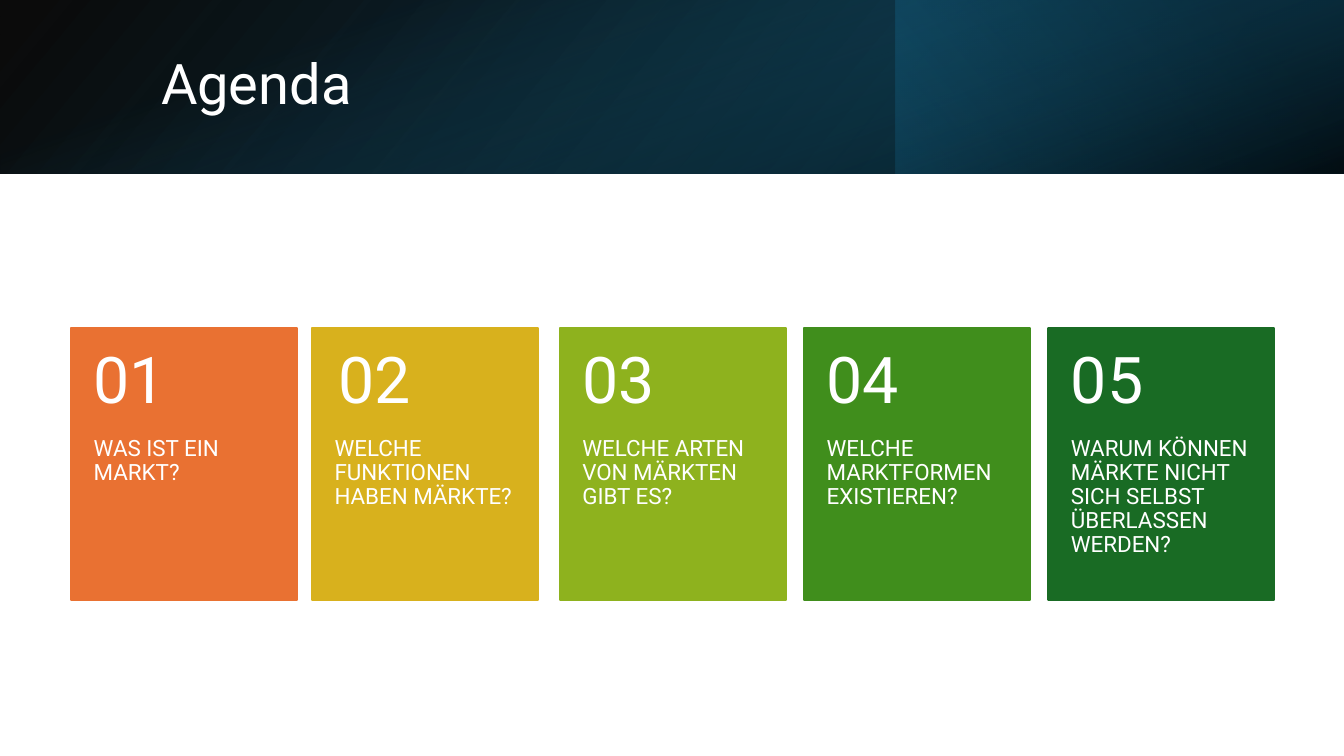
"""Build the agenda slide with a gradient header and five numbered cards."""
from dataclasses import dataclass

import lxml.etree
import pptx
import pptx.dml.color
import pptx.enum.shapes
import pptx.enum.text
import pptx.oxml.ns
import pptx.util

Pt = pptx.util.Pt
FONT = "Roboto"
WHITE = "FFFFFF"
SLIDE_W, SLIDE_H = 960, 540
HEADER_H = 123.84
CARD_TOP, CARD_W, CARD_H = 234.6, 161.3, 193.7
NUMBER_H = 77.4
PAD = 16


@dataclass
class Stop:
    position: float
    color: str
    alpha: int


@dataclass
class Band:
    left: float
    top: float
    width: float
    height: float
    angle: int
    stops: tuple[Stop, Stop]
    rotation: int = 0
    flip: bool = False


@dataclass
class Card:
    left: float
    color: str
    text: str
    number_shift: float = 0


BANDS = [
    Band(0, 0, SLIDE_W, HEADER_H, 140,
         (Stop(0, "000000", 96), Stop(1, "104862", 100)), flip=True),
    Band(SLIDE_W * 2 / 3, 0, SLIDE_W / 3, HEADER_H, 320,
         (Stop(0.19, "0B3041", 68), Stop(1, "156082", 79)), rotation=180),
    Band((SLIDE_W - HEADER_H) / 2, (HEADER_H - SLIDE_W) / 2, HEADER_H, SLIDE_W, 340,
         (Stop(0.23, "156082", 0), Stop(0.99, "000000", 74)), rotation=90),
]

CARDS = [
    Card(51, "E97132", "WAS IST EIN MARKT?"),
    Card(223, "D8B11D", "WELCHE FUNKTIONEN HABEN MÄRKTE?", 2.5),
    Card(400, "8EB21E", "WELCHE ARTEN VON MÄRKTEN GIBT ES?"),
    Card(574.5, "408E1C", "WELCHE MARKTFORMEN EXISTIEREN?"),
    Card(749, "196B24", "WARUM KÖNNEN MÄRKTE NICHT SICH SELBST ÜBERLASSEN WERDEN?"),
]


def rgb(value: str) -> pptx.dml.color.RGBColor:
    """Turn a hex string into a colour."""
    return pptx.dml.color.RGBColor.from_string(value)


def add_rect(s, left: float, top: float, width: float, height: float):
    """Add a rectangle without a shadow."""
    sp = s.shapes.add_shape(pptx.enum.shapes.MSO_SHAPE.RECTANGLE,
                            Pt(left), Pt(top), Pt(width), Pt(height))
    sp.shadow.inherit = False
    return sp


def add_text(s, text: str, left: float, top: float, width: float, height: float, *,
             size: float, insets: tuple[float, float, float, float],
             middle: bool = False) -> None:
    """Add a white text box; insets run left, top, right, bottom."""
    tf = s.shapes.add_textbox(Pt(left), Pt(top), Pt(width), Pt(height)).text_frame
    tf.word_wrap = True
    tf.margin_left, tf.margin_top, tf.margin_right, tf.margin_bottom = map(Pt, insets)
    anchor = pptx.enum.text.MSO_ANCHOR
    tf.vertical_anchor = anchor.MIDDLE if middle else anchor.TOP
    p = tf.paragraphs[0]
    p.line_spacing = 0.9
    r = p.add_run()
    r.text = text
    r.font.name = FONT
    r.font.size = Pt(size)
    r.font.color.rgb = rgb(WHITE)


def add_band(s, band: Band) -> None:
    """Draw one translucent gradient layer of the header."""
    sp = add_rect(s, band.left, band.top, band.width, band.height)
    sp.rotation = band.rotation
    if band.flip:
        sp._element.spPr.xfrm.set("flipH", "1")
    sp.line.fill.background()
    sp.fill.gradient()
    sp.fill.gradient_angle = 360 - band.angle
    for gs, stop in zip(sp.fill.gradient_stops, band.stops):
        gs.position = stop.position
        gs.color.rgb = rgb(stop.color)
        clr = gs._gs.find(pptx.oxml.ns.qn("a:srgbClr"))
        alpha = lxml.etree.SubElement(clr, pptx.oxml.ns.qn("a:alpha"))
        alpha.set("val", str(stop.alpha * 1000))


def add_card(s, number: int, card: Card) -> None:
    """Draw one coloured card with its number and question."""
    sp = add_rect(s, card.left, CARD_TOP, CARD_W, CARD_H)
    sp.fill.solid()
    sp.fill.fore_color.rgb = rgb(card.color)
    sp.line.color.rgb = rgb(card.color)
    sp.line.width = Pt(1.5)
    add_text(s, card.text, card.left, CARD_TOP + NUMBER_H, CARD_W, CARD_H - NUMBER_H,
             size=16, insets=(PAD, 0, PAD, 26))
    add_text(s, f"{number:02}", card.left + card.number_shift, CARD_TOP, CARD_W, NUMBER_H,
             size=46, insets=(PAD, 13, PAD, 13), middle=True)


def main() -> None:
    """Build and save the slide."""
    prs = pptx.Presentation()
    prs.slide_width, prs.slide_height = Pt(SLIDE_W), Pt(SLIDE_H)
    s = prs.slides.add_slide(prs.slide_layouts[6])
    for band in BANDS:
        add_band(s, band)
    add_text(s, "Agenda", 108, 27.4, 790, 69, size=40,
             insets=(7.2, 3.6, 7.2, 3.6), middle=True)
    for number, card in enumerate(CARDS, 1):
        add_card(s, number, card)
    prs.save("out.pptx")


if __name__ == "__main__":
    main()
